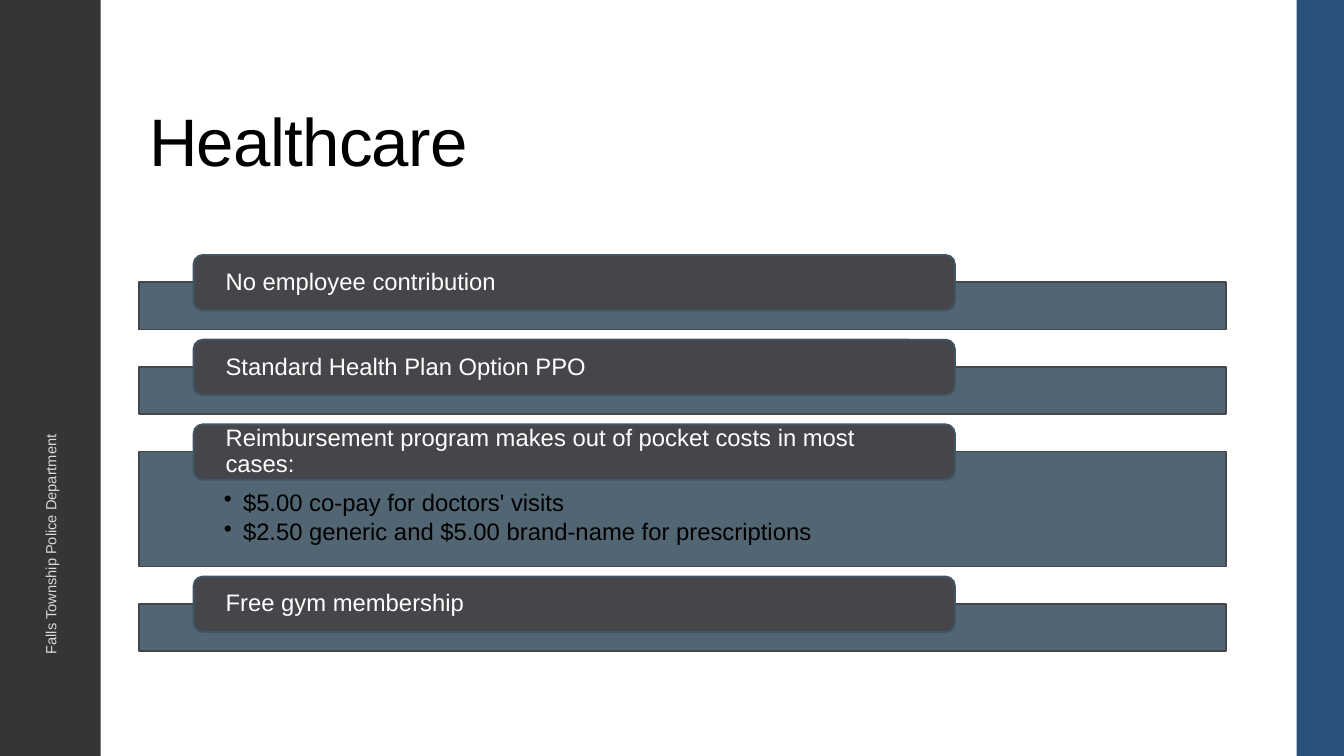
from lxml import etree
from pptx import Presentation
from pptx.dml.color import RGBColor
from pptx.enum.shapes import MSO_SHAPE as Shape
from pptx.enum.text import MSO_ANCHOR as Anchor, PP_ALIGN as Align
from pptx.oxml.ns import qn
from pptx.util import Inches, Pt

COLORS = {"black": "000000", "white": "FFFFFF", "charcoal": "353537", "blue": "29527B",
          "slate": "405564", "graphite": "46464A", "footer": "D9D9DB"}
TITLE = "Healthcare"
DEPARTMENT = "Falls Township Police Department"
BENEFITS = [
    ("No employee contribution", []),
    ("Standard Health Plan Option PPO", []),
    ("Reimbursement program makes out of pocket costs in most cases:",
     ["$5.00 co-pay for doctors' visits",
      "$2.50 generic and $5.00 brand-name for prescriptions"]),
    ("Free gym membership", []),
]
SIDE_PANELS = [(0, 1, "charcoal"), (12.86, 0.47, "blue")]
BAR_LEFT, BAR_WIDTH, FIRST_BAR_TOP, BAR_GAP = 1.38, 10.78, 2.8, 0.37
BAR_HEIGHT, DETAILED_BAR_HEIGHT = 0.47, 1.14
LABEL_LEFT, LABEL_WIDTH, LABEL_HEIGHT, LABEL_RISE = 1.92, 7.55, 0.55, 0.27


def color(name):
    return RGBColor.from_string(COLORS[name])


def add_box(page, kind, area, fill, line=None, line_width=0):
    box = page.shapes.add_shape(kind, *map(Inches, area))
    box.shadow.inherit = False
    box.fill.solid()
    box.fill.fore_color.rgb = color(fill)
    if line:
        box.line.color.rgb = color(line)
        box.line.width = Pt(line_width)
    else:
        box.line.fill.background()
    return box


def write(box, lines, size, ink, anchor, insets=(0.1, 0.05, 0.1, 0.05), spacing=0.9, after=0):
    frame = box.text_frame
    sides = ("margin_left", "margin_top", "margin_right", "margin_bottom")
    formats = {"word_wrap": True, "vertical_anchor": anchor,
               **dict(zip(sides, map(Inches, insets)))}
    for name, value in formats.items():
        setattr(frame, name, value)
    for index, line in enumerate(lines):
        para = frame.add_paragraph() if index else frame.paragraphs[0]
        para_formats = {"alignment": Align.LEFT, "line_spacing": spacing, "space_after": Pt(after)}
        for name, value in para_formats.items():
            setattr(para, name, value)
        span = para.add_run()
        span.text = line
        for name, value in {"size": Pt(size), "name": "Arial"}.items():
            setattr(span.font, name, value)
        span.font.color.rgb = color(ink)
    return frame


def add_bullets(frame):
    for para in frame.paragraphs:
        settings = para._p.get_or_add_pPr()
        settings.set("marL", str(Inches(0.19)))
        settings.set("indent", str(-Inches(0.19)))
        etree.SubElement(settings, qn("a:buChar"), char="•")


def set_opacity(box, percent):
    tint = box.fill._xPr.find(qn("a:solidFill"))[0]
    etree.SubElement(tint, qn("a:alpha"), val=str(percent * 1000))


def style_title(span):
    settings = span._r.get_or_add_rPr()
    settings.set("spc", "-50")
    effects = etree.Element(qn("a:effectLst"))
    settings.find(qn("a:solidFill")).addnext(effects)
    shadow = etree.SubElement(effects, qn("a:outerShdw"), blurRad="38100",
                              dist="38100", dir="2700000", algn="tl")
    tint = etree.SubElement(shadow, qn("a:srgbClr"), val=COLORS["black"])
    etree.SubElement(tint, qn("a:alpha"), val="43000")


def add_benefits(page):
    top = FIRST_BAR_TOP
    for label, details in BENEFITS:
        height = DETAILED_BAR_HEIGHT if details else BAR_HEIGHT
        bar = add_box(page, Shape.RECTANGLE, (BAR_LEFT, top, BAR_WIDTH, height),
                      "slate", "graphite", 1.1)
        set_opacity(bar, 90)
        if details:
            add_bullets(write(bar, details, 17, "black", Anchor.TOP,
                              (0.84, 0.39, 0.84, 0.13), after=2.5))
        tab = add_box(page, Shape.ROUNDED_RECTANGLE,
                      (LABEL_LEFT, top - LABEL_RISE, LABEL_WIDTH, LABEL_HEIGHT),
                      "graphite", "slate", 1.35)
        write(tab, [label], 17, "white", Anchor.MIDDLE, (0.29, 0, 0.29, 0))
        top += height + BAR_GAP


def main():
    deck = Presentation()
    deck.slide_width, deck.slide_height = Inches(13.33), Inches(7.5)
    page = deck.slides.add_slide(deck.slide_layouts[6])
    for left, width, fill in SIDE_PANELS:
        add_box(page, Shape.RECTANGLE, (left, 0, width, 7.5), fill)
    title = page.shapes.add_textbox(*map(Inches, (1.38, 0.4, 10.78, 1.45)))
    frame = write(title, [TITLE], 48, "black", Anchor.BOTTOM)
    style_title(frame.paragraphs[0].runs[0])
    footer = page.shapes.add_textbox(*map(Inches, (-1.46, 4.43, 3.92, 0.4)))
    footer.rotation = 270
    write(footer, [DEPARTMENT], 10.5, "footer", Anchor.MIDDLE, spacing=1)
    add_benefits(page)
    deck.save("out.pptx")


if __name__ == "__main__":
    main()
